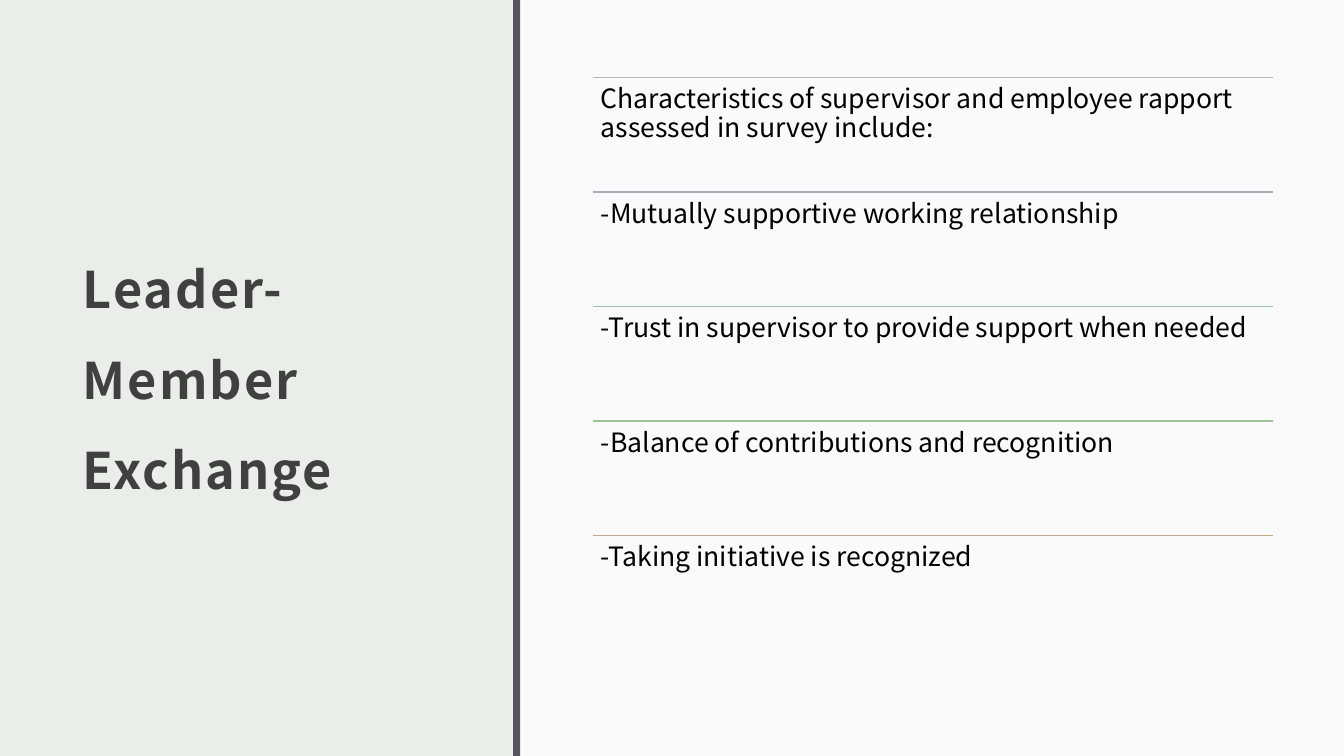
from lxml import etree
from pptx import Presentation
from pptx.dml.color import RGBColor
from pptx.enum import shapes, text
from pptx.oxml.ns import qn
from pptx.util import Inches, Pt

FONT = "Noto Sans CJK JP"
TITLE = "Leader-Member Exchange"
SURVEY_ITEMS = [
    ("Characteristics of supervisor and employee rapport assessed in survey include:", "BDB3B6"),
    ("-Mutually supportive working relationship", "B2AABE"),
    ("-Trust in supervisor to provide support when needed", "A1BDC0"),
    ("-Balance of contributions and recognition", "A0C297"),
    ("-Taking initiative is recognized", "C5A98D"),
]
SLIDE_W, SLIDE_H = 13.33, 7.5
PANEL_LEFT = 5.1
DIVIDER_W = 0.07
CONTENT_TOP, CONTENT_H = 0.77, 5.68
LIST_LEFT, LIST_W = 5.88, 6.75


def rgb(value):
    return RGBColor.from_string(value)


def add_block(slide, left, width, color, alpha=None):
    """Add a full-height rectangle; alpha is its opacity in percent."""
    block = slide.shapes.add_shape(
        shapes.MSO_SHAPE.RECTANGLE, Inches(left), 0, Inches(width), Inches(SLIDE_H))
    block.shadow.inherit = False
    block.fill.solid()
    block.fill.fore_color.rgb = rgb(color)
    block.line.fill.background()
    if alpha is not None:
        tint = block._element.spPr.find(".//" + qn("a:srgbClr"))
        etree.SubElement(tint, qn("a:alpha")).set("val", str(alpha * 1000))


def add_rule(slide, left, top, width, color):
    rule = slide.shapes.add_connector(
        shapes.MSO_CONNECTOR.STRAIGHT,
        Inches(left), Inches(top), Inches(left + width), Inches(top))
    rule.line.color.rgb = rgb(color)
    rule.line.width = Pt(1)
    etree.SubElement(rule._element.spPr, qn("a:effectLst"))


def add_text(slide, words, left, top, width, height, *, size, color, inset, line_spacing,
             bold=False, tracking=0, space_after=0, anchor=text.MSO_ANCHOR.TOP):
    frame = slide.shapes.add_textbox(
        Inches(left), Inches(top), Inches(width), Inches(height)).text_frame
    frame.word_wrap = True
    frame.vertical_anchor = anchor
    frame.margin_left = frame.margin_right = Inches(inset)
    frame.margin_top = frame.margin_bottom = Inches(inset)
    paragraph = frame.paragraphs[0]
    paragraph.line_spacing = line_spacing
    paragraph.space_after = Pt(space_after)
    run = paragraph.add_run()
    run.text = words
    run.font.name = FONT
    run.font.size = Pt(size)
    run.font.bold = bold
    run.font.color.rgb = rgb(color)
    if tracking:
        run.font._element.set("spc", str(int(tracking * 100)))


def main():
    deck = Presentation()
    deck.slide_width, deck.slide_height = Inches(SLIDE_W), Inches(SLIDE_H)
    slide = deck.slides.add_slide(deck.slide_layouts[6])
    slide.background.fill.solid()
    slide.background.fill.fore_color.rgb = rgb("EBEDEB")

    add_block(slide, PANEL_LEFT, SLIDE_W - PANEL_LEFT, "FFFFFF", alpha=75)
    add_block(slide, PANEL_LEFT - 0.01, DIVIDER_W, "595460")
    add_text(slide, TITLE, 0.7, CONTENT_TOP, 3.73, CONTENT_H, size=36, color="404040",
             inset=0.12, line_spacing=1.5, bold=True, tracking=1.5,
             anchor=text.MSO_ANCHOR.MIDDLE)

    row_h = CONTENT_H / len(SURVEY_ITEMS)
    for row, (item, rule_color) in enumerate(SURVEY_ITEMS):
        top = CONTENT_TOP + row * row_h
        add_rule(slide, LIST_LEFT, top, LIST_W, rule_color)
        add_text(slide, item, LIST_LEFT, top, LIST_W, row_h, size=19, color="000000",
                 inset=0.08, line_spacing=0.9, space_after=6.65)

    deck.save("out.pptx")


if __name__ == "__main__":
    main()
